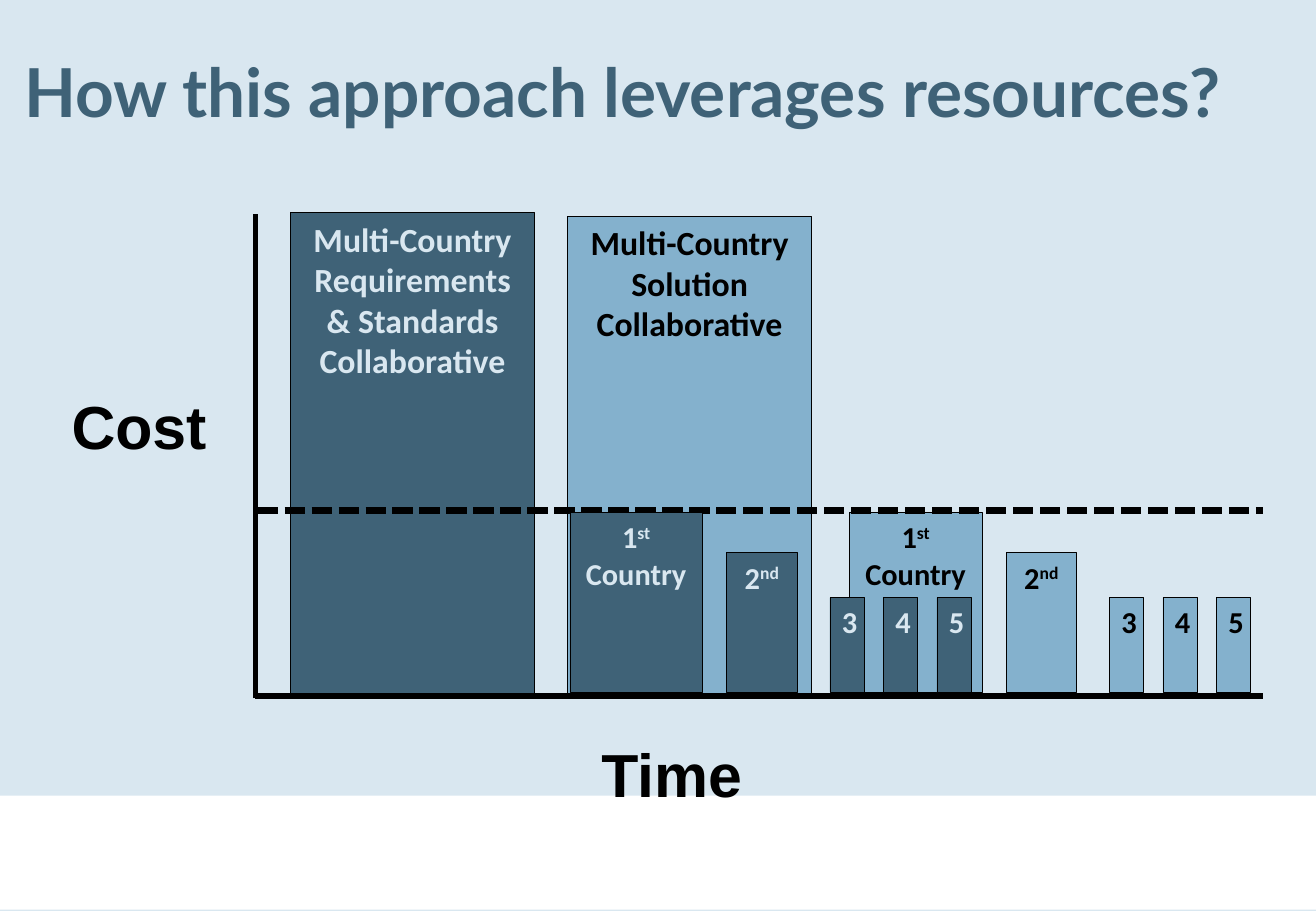
from lxml import etree
from pptx import Presentation
from pptx.dml.color import RGBColor
from pptx.enum.dml import MSO_LINE
from pptx.enum.shapes import MSO_CONNECTOR, MSO_SHAPE
from pptx.enum.text import MSO_ANCHOR, MSO_AUTO_SIZE, PP_ALIGN
from pptx.oxml.ns import qn
from pptx.util import Inches, Pt

RECT, STRAIGHT = MSO_SHAPE.RECTANGLE, MSO_CONNECTOR.STRAIGHT
LEFT, CENTER = PP_ALIGN.LEFT, PP_ALIGN.CENTER
TOP, MIDDLE = MSO_ANCHOR.TOP, MSO_ANCHOR.MIDDLE
NO_FIT, GROW = MSO_AUTO_SIZE.NONE, MSO_AUTO_SIZE.SHAPE_TO_FIT_TEXT
SHORT_DASH = MSO_LINE.SQUARE_DOT

THEME = {
    "pale": RGBColor(0xD9, 0xE7, 0xF0),
    "light": RGBColor(0x84, 0xB1, 0xCD),
    "dark": RGBColor(0x3F, 0x62, 0x77),
    "black": RGBColor(0, 0, 0),
    "white": RGBColor(0xFF, 0xFF, 0xFF),
    "title": ("Lato", 40),
    "axis": ("Arial", 36),
    "collaborative": ("Calibri", 20),
    "country": ("Calibri", 18),
}
W, H = 10.83, 7.5
BASE = 5.7
AXIS_X, AXIS_END, AXIS_Y = 2.1, 10.39, 5.73

# Offset from the first bar, width, height, lines; "^" starts a superscript
COUNTRIES = [
    (0, 1.09, 1.48, ["1^st", "Country"]),
    (1.29, 0.58, 1.15, ["2^nd"]),
    *[(2.14 + 0.44 * i, 0.28, 0.78, [str(3 + i)]) for i in range(3)],
]


def write(tf, lines, style, color, align):
    """Fill a text frame, raising whatever follows "^" in a line."""
    name, size = THEME[style]
    for i, line in enumerate(lines):
        p = tf.paragraphs[0] if i == 0 else tf.add_paragraph()
        p.alignment = align
        for j, part in enumerate(line.split("^")):
            r = p.add_run()
            r.text = part
            r.font.name, r.font.size, r.font.bold = name, Pt(size), True
            r.font.color.rgb = THEME[color]
            if j:
                r.font._element.set("baseline", "30000")


def add_bar(x, w, h, lines, style, fill, color, base=BASE):
    s = shapes.add_shape(RECT, Inches(x), Inches(base - h), Inches(w), Inches(h))
    s.shadow.inherit = False
    s.fill.solid()
    s.fill.fore_color.rgb = THEME[fill]
    s.line.color.rgb = THEME["black"]
    s.line.width = Pt(0.25)
    tf = s.text_frame
    tf.word_wrap = True
    tf.vertical_anchor = TOP
    if style == "country" and w > 0.5:
        tf.margin_left = tf.margin_right = 0
    write(tf, lines, style, color, CENTER)


prs = Presentation()
prs.slide_width, prs.slide_height = Inches(W), Inches(H)
slide = prs.slides.add_slide(prs.slide_layouts[5])
shapes = slide.shapes
slide.background.fill.solid()
slide.background.fill.fore_color.rgb = THEME["pale"]

footer = shapes.add_shape(RECT, 0, Inches(6.55), Inches(W), Inches(0.94))
footer.shadow.inherit = False
footer.fill.solid()
footer.fill.fore_color.rgb = THEME["white"]
footer.line.fill.background()

title = shapes.title
title.left, title.top = Inches(0.1), Inches(0.12)
title.width, title.height = Inches(W - 0.22), Inches(1.25)
tf = title.text_frame
tf.auto_size = NO_FIT
tf.vertical_anchor = MIDDLE
write(tf, ["How this approach leverages resources?"], "title", "dark", LEFT)

# Solution bars lie behind the axes
for dx, w, h, lines in COUNTRIES:
    add_bar(6.99 + dx, w, h, lines, "country", "light", "black")
add_bar(4.67, 2.01, 3.96, ["Multi-Country Solution Collaborative"],
        "collaborative", "light", "black", base=5.74)

# Requirements bars lie in front
add_bar(2.39, 2.01, 3.96, ["Multi-Country Requirements & Standards", "Collaborative"],
        "collaborative", "dark", "pale", base=5.71)

for x1, y1, x2, y2, width, dash in [
    (AXIS_X, AXIS_Y, AXIS_END, AXIS_Y, 3, None),
    (AXIS_X, 5.75, AXIS_X, 1.76, 3, None),
    (2.12, 4.2, AXIS_END, 4.2, 4, SHORT_DASH),
]:
    c = shapes.add_connector(STRAIGHT, Inches(x1), Inches(y1), Inches(x2), Inches(y2))
    c.line.color.rgb = THEME["black"]
    c.line.width = Pt(width)
    if dash:
        c.line.dash_style = dash
        c.line._ln.find(qn("a:prstDash")).set("val", "sysDash")
    etree.SubElement(c._element.spPr, qn("a:effectLst"))

for dx, w, h, lines in COUNTRIES:
    add_bar(4.69 + dx, w, h, lines, "country", "dark", "pale")

for label, x, y, w in [("Cost", 0.49, 3.15, 1.32), ("Time", 4.85, 6.02, 1.37)]:
    tf = shapes.add_textbox(Inches(x), Inches(y), Inches(w), Inches(0.71)).text_frame
    tf.word_wrap = False
    tf.auto_size = GROW
    write(tf, [label], "axis", "black", LEFT)

prs.save("out.pptx")
